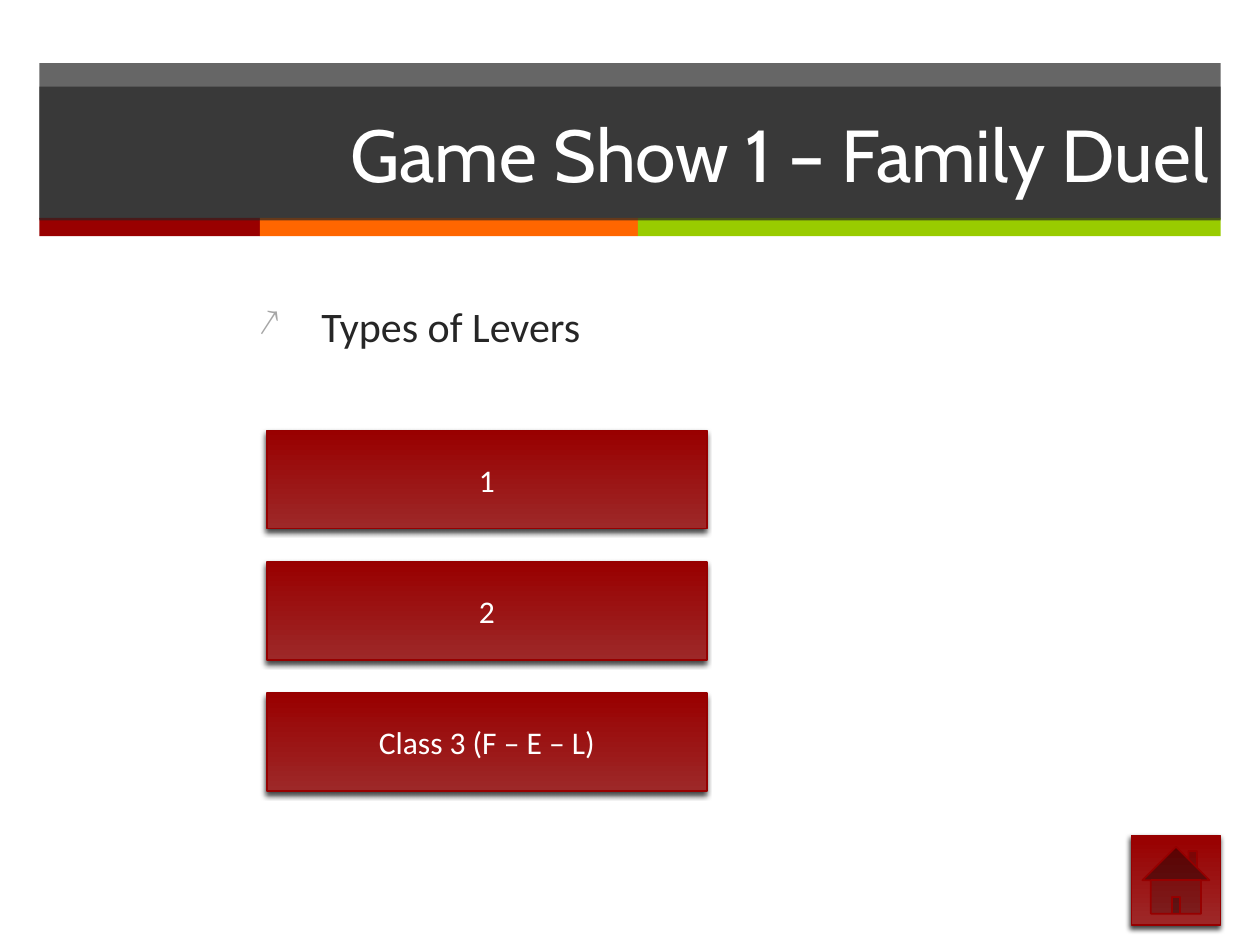
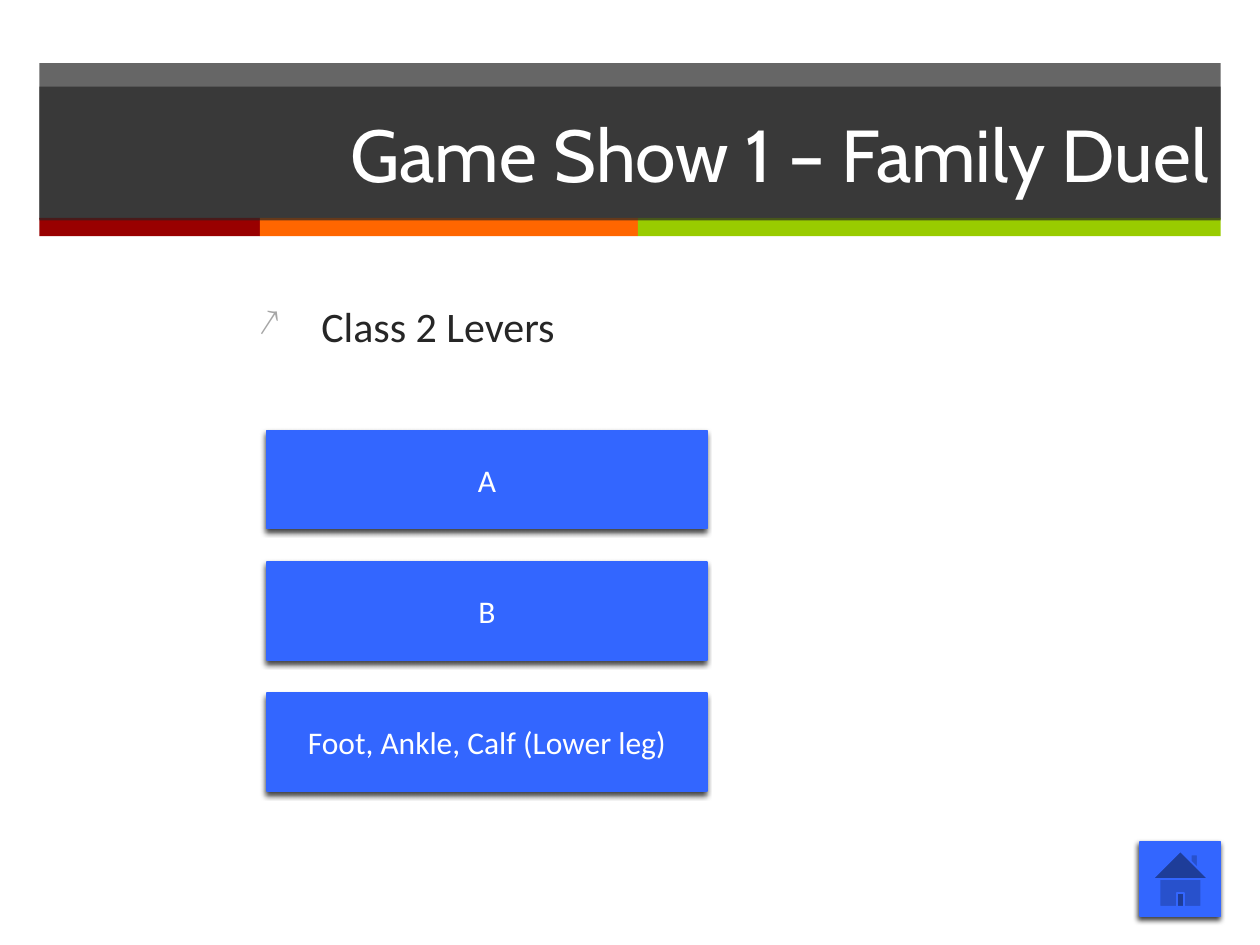
from dataclasses import dataclass

from lxml import etree
from pptx import Presentation
from pptx.dml.color import RGBColor
from pptx.enum.shapes import MSO_SHAPE
from pptx.enum.text import MSO_ANCHOR, PP_ALIGN
from pptx.oxml.ns import qn
from pptx.util import Pt

RECTANGLE = MSO_SHAPE.RECTANGLE
HOME = MSO_SHAPE.ACTION_BUTTON_HOME
MIDDLE = MSO_ANCHOR.MIDDLE
CENTER, LEFT, RIGHT = PP_ALIGN.CENTER, PP_ALIGN.LEFT, PP_ALIGN.RIGHT

BLACK = RGBColor(0x00, 0x00, 0x00)
WHITE = RGBColor(0xFF, 0xFF, 0xFF)
CHARCOAL = RGBColor(0x26, 0x26, 0x26)
BULLET_GRAY = RGBColor(0xA6, 0xA6, 0xA6)
RED = RGBColor(0x99, 0x00, 0x00)
LIGHT_RED = RGBColor(0x9D, 0x28, 0x28)
DARK_RED = RGBColor(0x96, 0x00, 0x00)
ORANGE = RGBColor(0xFF, 0x66, 0x00)
GREEN = RGBColor(0x99, 0xCC, 0x00)
BLUE = RGBColor(0x33, 0x66, 0xFF)

TITLE_FONT, BODY_FONT = "Cabin", "Calibri"
TITLE = "Game Show 1 – Family Duel"
MARGIN, BAND_WIDTH = 22.5, 675
STRIPES = ((RED, 126), (ORANGE, 216), (GREEN, 333))
ANSWER_LEFT, ANSWER_TOP, ANSWER_PITCH = 152.5, 246, 75
ANSWER_WIDTH, ANSWER_HEIGHT = 251.5, 56


@dataclass(frozen=True)
class Box:
    left: float
    top: float
    width: float
    height: float

    def lengths(self) -> tuple:
        return Pt(self.left), Pt(self.top), Pt(self.width), Pt(self.height)


@dataclass(frozen=True)
class ButtonStyle:
    top_color: RGBColor
    bottom_color: RGBColor
    outline: RGBColor


@dataclass(frozen=True)
class Round:
    topic: str
    answers: tuple
    style: ButtonStyle
    home: Box


RED_BUTTON = ButtonStyle(RED, LIGHT_RED, DARK_RED)
BLUE_BUTTON = ButtonStyle(BLUE, BLUE, BLUE)
ROUNDS = (
    Round("Types of Levers", ("1", "2", "Class 3 (F – E – L)"),
          RED_BUTTON, Box(646.5, 477.5, 51, 51)),
    Round("Class 2 Levers", ("A", "B", "Foot, Ankle, Calf (Lower leg)"),
          BLUE_BUTTON, Box(651.5, 481, 46, 42.5)),
)


def add_color(parent, color: RGBColor, alpha: int = 100) -> None:
    node = etree.SubElement(parent, qn("a:srgbClr"), val=str(color))
    if alpha < 100:
        etree.SubElement(node, qn("a:alpha"), val=str(alpha * 1000))


def add_band(slide, box: Box, color: RGBColor, alpha: int = 100):
    band = slide.shapes.add_shape(RECTANGLE, *box.lengths())
    band.shadow.inherit = False
    band.line.fill.background()
    band.fill.solid()
    band.fill.fore_color.rgb = color
    if alpha < 100:
        node = band.fill._xPr.find(qn("a:solidFill"))[0]
        etree.SubElement(node, qn("a:alpha"), val=str(alpha * 1000))
    return band


def write(shape, text: str, font: str, size: float, color: RGBColor, align) -> None:
    shape.text_frame.word_wrap = True
    paragraph = shape.text_frame.paragraphs[0]
    paragraph.text = text
    paragraph.alignment = align
    run_font = paragraph.runs[0].font
    run_font.name, run_font.size = font, Pt(size)
    run_font.color.rgb = color


def add_header(slide) -> None:
    add_band(slide, Box(MARGIN, 36, BAND_WIDTH, 89.25), CHARCOAL, 70)
    left = MARGIN
    for color, width in STRIPES:
        add_band(slide, Box(left, 124.5, width, 10.5), color)
        left += width
    title = add_band(slide, Box(MARGIN, 49.5, BAND_WIDTH, 76.5), CHARCOAL, 70)
    title.text_frame.vertical_anchor = MIDDLE
    write(title, TITLE, TITLE_FONT, 42, WHITE, RIGHT)


def add_topic(slide, topic: str) -> None:
    text_box = slide.shapes.add_textbox(*Box(140.5, 168, 557, 44.5).lengths())
    properties = text_box.text_frame.paragraphs[0]._p.get_or_add_pPr()
    properties.set("marL", str(Pt(36)))
    properties.set("indent", str(Pt(-36)))
    add_color(etree.SubElement(properties, qn("a:buClr")), BULLET_GRAY)
    etree.SubElement(properties, qn("a:buSzPct"), val="90000")
    etree.SubElement(properties, qn("a:buChar"), char="↗")
    write(text_box, topic, BODY_FONT, 24, CHARCOAL, LEFT)


def add_button(slide, preset, box: Box, style: ButtonStyle):
    button = slide.shapes.add_shape(preset, *box.lengths())
    if style.top_color == style.bottom_color:
        button.fill.solid()
        button.fill.fore_color.rgb = style.top_color
    else:
        button.fill.gradient()
        button.fill.gradient_angle = 90
        stops = button.fill.gradient_stops
        for stop, color in zip(stops, (style.bottom_color, style.top_color)):
            stop.color.rgb = color
        stops[0].position, stops[1].position = 0, 1
    button.line.color.rgb = style.outline
    button.line.width = Pt(1)
    add_shadow(button)
    return button


def add_shadow(shape) -> None:
    shape.shadow.inherit = False
    effects = shape._element.spPr.find(qn("a:effectLst"))
    shadow = etree.SubElement(
        effects, qn("a:outerShdw"), blurRad=str(Pt(3)), dist=str(Pt(2)),
        dir=str(110 * 60000), rotWithShape="0")
    add_color(shadow, BLACK, 75)


def add_round(slide, game_round: Round) -> None:
    add_header(slide)
    add_topic(slide, game_round.topic)
    for row, answer in enumerate(game_round.answers):
        box = Box(ANSWER_LEFT, ANSWER_TOP + row * ANSWER_PITCH,
                  ANSWER_WIDTH, ANSWER_HEIGHT)
        button = add_button(slide, RECTANGLE, box, game_round.style)
        button.text_frame.vertical_anchor = MIDDLE
        write(button, answer, BODY_FONT, 18, WHITE, CENTER)
    add_button(slide, HOME, game_round.home, game_round.style)


def main() -> None:
    presentation = Presentation()
    presentation.slide_width, presentation.slide_height = Pt(720), Pt(540)
    blank = presentation.slide_layouts[6]
    for game_round in ROUNDS:
        add_round(presentation.slides.add_slide(blank), game_round)
    presentation.save("out.pptx")


if __name__ == "__main__":
    main()
